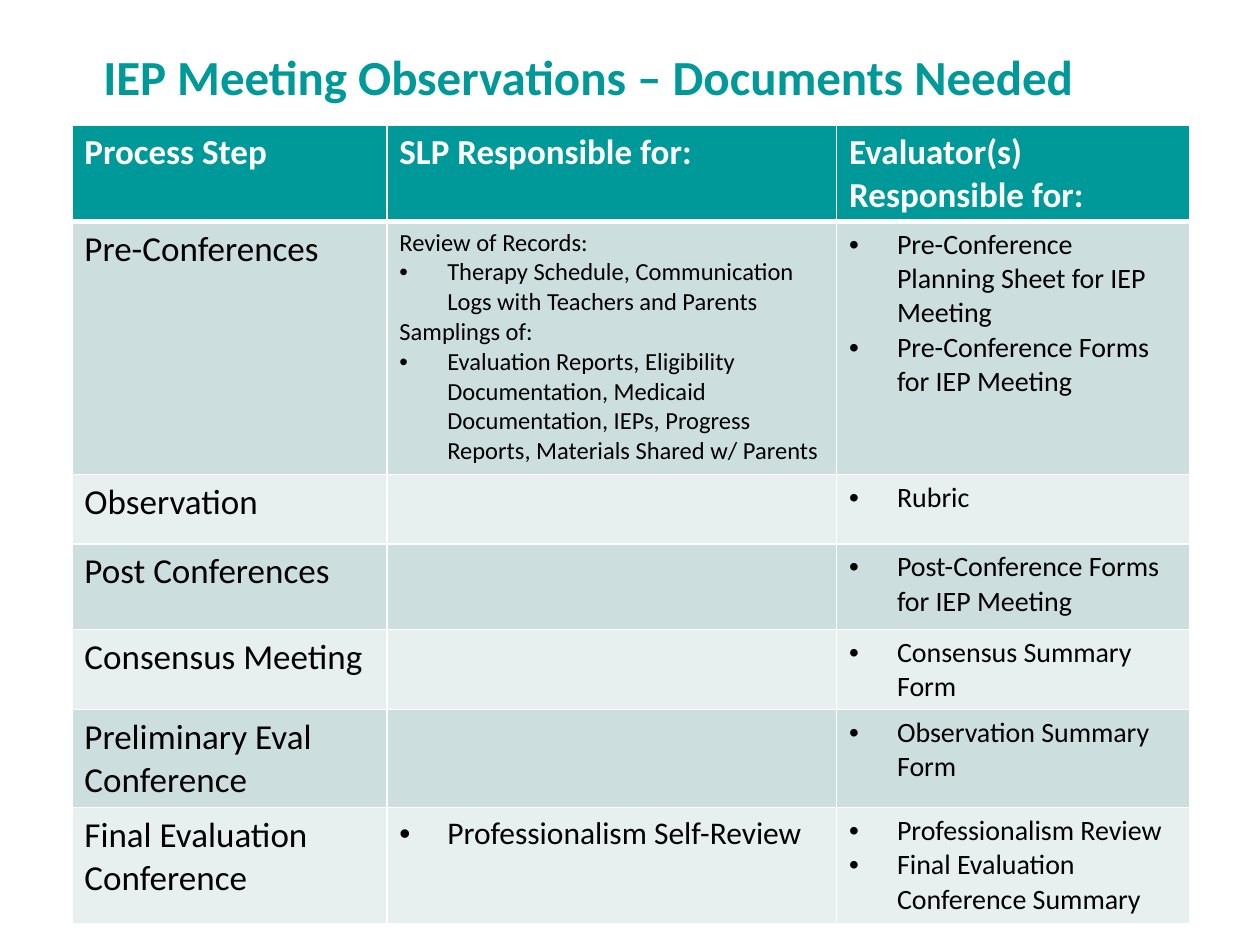
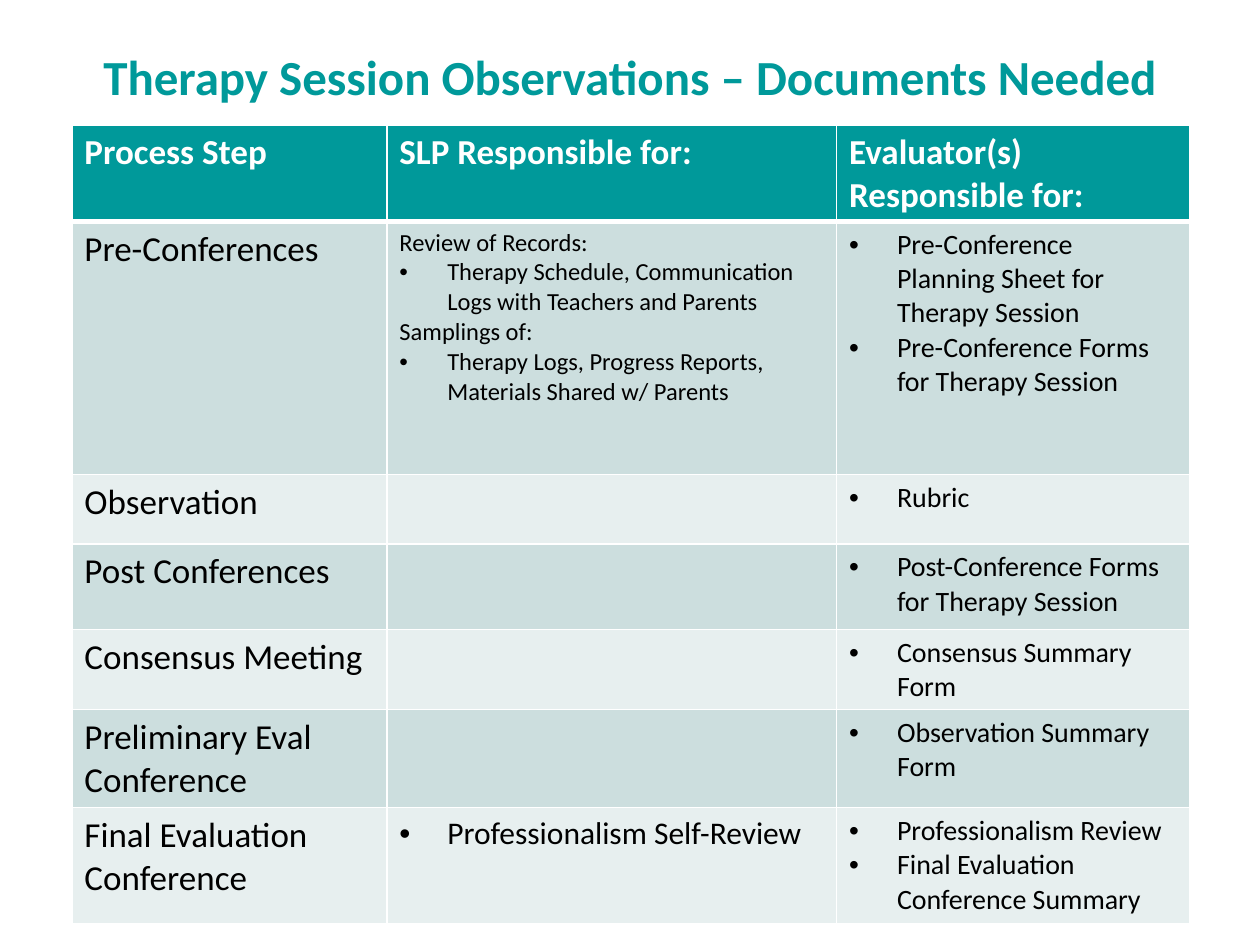
from lxml.etree import SubElement
from pptx import Presentation
from pptx.dml.color import RGBColor
from pptx.enum.text import MSO_ANCHOR
from pptx.oxml.ns import qn
from pptx.util import Inches, Pt

COLORS = {
    "teal": "00999A",
    "band_dark": "CCDEDE",
    "band_light": "E7EFEF",
    "white": "FFFFFF",
    "black": "000000",
}
FONT = "Calibri"
BULLET = "• "
BULLET_INDENT = Inches(0.38)
COLUMN_WIDTHS = [2.5, 3.57, 2.8]
ROW_HEIGHTS = [0.7, 2.01, 0.55, 0.68, 0.58, 0.78, 0.92]
HEADER = ["Process Step", "SLP Responsible for:", "Evaluator(s) Responsible for:"]

TITLE_FORMAT = {"name": FONT, "size": Pt(28), "bold": True, "color": "teal"}
HEADER_FORMAT = {"name": FONT, "size": Pt(20), "bold": True, "color": "white"}
BODY_FORMAT = {"name": FONT, "bold": False, "color": "black"}
STEP_SIZE, RECORDS_SIZE, REVIEW_SIZE, FORMS_SIZE = 20, 14, 18, 16

# What differs between the two kinds of observation
OBSERVATIONS = [
    {
        "title": "IEP Meeting Observations – Documents Needed",
        "title_width": 8.2,
        "samplings": "Evaluation Reports, Eligibility Documentation, Medicaid Documentation, "
                     "IEPs, Progress Reports, Materials Shared w/ Parents",
        "planning": "Pre-Conference Planning Sheet for IEP Meeting",
        "pre_forms": "Pre-Conference Forms for IEP Meeting",
        "post_forms": "Post-Conference Forms for IEP Meeting",
    },
    {
        "title": "Therapy Session Observations – Documents Needed",
        "title_width": 8.62,
        "samplings": "Therapy Logs, Progress Reports, Materials Shared w/ Parents",
        "planning": "Pre-Conference Planning Sheet for Therapy Session",
        "pre_forms": "Pre-Conference Forms for Therapy Session",
        "post_forms": "Post-Conference Forms for Therapy Session",
    },
]


def write_paragraph(paragraph, text, font_format):
    """Write one formatted line; a leading bullet becomes a real list bullet."""
    if text.startswith(BULLET):
        text = text.removeprefix(BULLET)
        properties = paragraph._p.get_or_add_pPr()
        properties.set("marL", str(BULLET_INDENT))
        properties.set("indent", str(-BULLET_INDENT))
        SubElement(properties, qn("a:buFont"), typeface="Arial")
        SubElement(properties, qn("a:buChar"), char=BULLET.strip())
    run = paragraph.add_run()
    run.text = text
    for name, value in font_format.items():
        if name == "color":
            run.font.color.rgb = RGBColor.from_string(COLORS[value])
        else:
            setattr(run.font, name, value)


def style_cell(cell, fill, bottom_width):
    """Give a cell white borders and a solid fill."""
    properties = cell._tc.get_or_add_tcPr()
    for side, width in {"L": 1, "R": 1, "T": 1, "B": bottom_width}.items():
        line = SubElement(properties, qn(f"a:ln{side}"), w=str(Pt(width)))
        line_fill = SubElement(line, qn("a:solidFill"))
        SubElement(line_fill, qn("a:srgbClr"), val=COLORS["white"])
    cell.fill.solid()
    cell.fill.fore_color.rgb = RGBColor.from_string(COLORS[fill])


presentation = Presentation()
presentation.slide_width = Inches(10)
presentation.slide_height = Inches(7.5)

for observation in OBSERVATIONS:
    slide = presentation.slides.add_slide(presentation.slide_layouts[6])

    # Title
    title = slide.shapes.add_textbox(
        Inches(0.82), Inches(-0.1), Inches(observation["title_width"]), Inches(0.94))
    frame_format = {"word_wrap": True, "vertical_anchor": MSO_ANCHOR.BOTTOM,
                    "margin_left": 0, "margin_right": 0, "margin_top": 0, "margin_bottom": 0}
    for name, value in frame_format.items():
        setattr(title.text_frame, name, value)
    title_paragraph = title.text_frame.paragraphs[0]
    title_paragraph.line_spacing = 0.85
    write_paragraph(title_paragraph, observation["title"], TITLE_FORMAT)

    # Process steps: step, what the SLP brings, what the evaluators bring
    records = ["Review of Records:",
               "• Therapy Schedule, Communication Logs with Teachers and Parents",
               "Samplings of:",
               BULLET + observation["samplings"]]
    steps = [
        ("Pre-Conferences", records,
         [BULLET + observation["planning"], BULLET + observation["pre_forms"]]),
        ("Observation", [], ["• Rubric"]),
        ("Post Conferences", [], [BULLET + observation["post_forms"]]),
        ("Consensus Meeting", [], ["• Consensus Summary Form"]),
        ("Preliminary Eval Conference", [], ["• Observation Summary Form"]),
        ("Final Evaluation Conference", ["• Professionalism Self-Review"],
         ["• Professionalism Review", "• Final Evaluation Conference Summary"]),
    ]

    # Table grid
    table = slide.shapes.add_table(
        len(ROW_HEIGHTS), len(COLUMN_WIDTHS), Inches(0.57), Inches(0.99),
        Inches(sum(COLUMN_WIDTHS)), Inches(sum(ROW_HEIGHTS))).table
    for column, width in zip(table.columns, COLUMN_WIDTHS):
        column.width = Inches(width)
    for row, height in zip(table.rows, ROW_HEIGHTS):
        row.height = Inches(height)

    # Header row
    for cell, heading in zip(table.rows[0].cells, HEADER):
        style_cell(cell, "teal", 3)
        write_paragraph(cell.text_frame.paragraphs[0], heading, HEADER_FORMAT)

    # Banded step rows
    for row_index, (step, slp_items, evaluator_items) in enumerate(steps, start=1):
        slp_size = RECORDS_SIZE if slp_items is records else REVIEW_SIZE
        contents = [([step], STEP_SIZE), (slp_items, slp_size), (evaluator_items, FORMS_SIZE)]
        for cell, (items, size) in zip(table.rows[row_index].cells, contents):
            style_cell(cell, "band_dark" if row_index % 2 else "band_light", 1)
            for item_index, item in enumerate(items):
                text_frame = cell.text_frame
                paragraph = text_frame.add_paragraph() if item_index else text_frame.paragraphs[0]
                write_paragraph(paragraph, item, {**BODY_FORMAT, "size": Pt(size)})

presentation.save("out.pptx")
